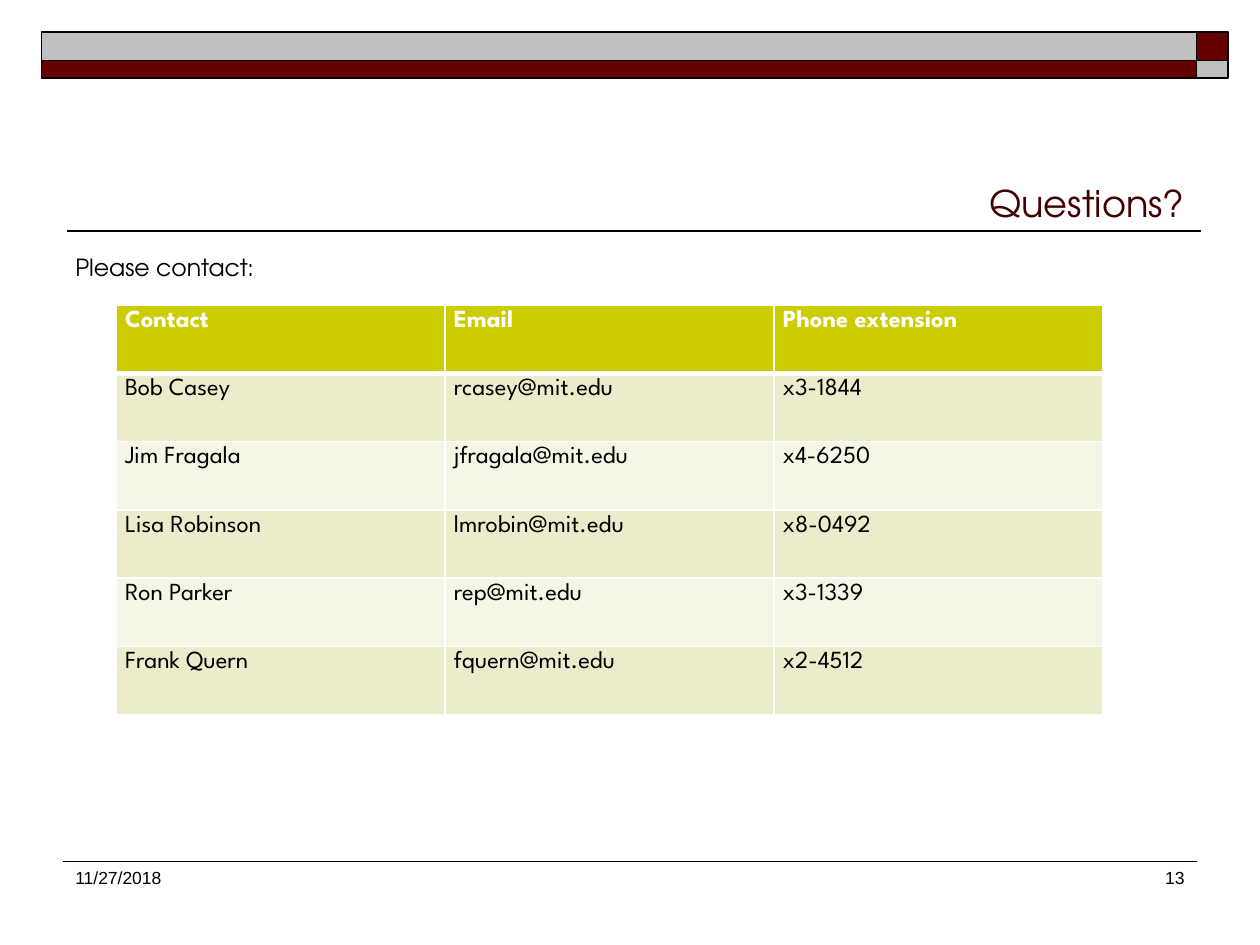
from lxml.etree import SubElement
from pptx import Presentation
from pptx.dml.color import RGBColor
from pptx.enum.shapes import MSO_CONNECTOR, MSO_SHAPE
from pptx.enum.text import MSO_ANCHOR as Anchor, PP_ALIGN as Align
from pptx.oxml import parse_xml
from pptx.oxml.ns import nsdecls, qn
from pptx.util import Cm, Pt

BLACK = RGBColor(0x00, 0x00, 0x00)
WHITE = RGBColor(0xFF, 0xFF, 0xFF)
MAROON = RGBColor(0x66, 0x00, 0x00)
TITLE_MAROON = RGBColor(0x42, 0x00, 0x00)
SILVER = RGBColor(0xC0, 0xC0, 0xC0)
OLIVE = RGBColor(0xCC, 0xCC, 0x00)
DARK_BAND = RGBColor(0xEC, 0xEC, 0xCC)
LIGHT_BAND = RGBColor(0xF6, 0xF6, 0xE7)

HEADING_FONT = "TeX Gyre Adventor"
TABLE_FONT = "League Spartan"
FOOTER_FONT = "Arial"

CONTACTS = [
    ("Contact", "Email", "Phone extension"),
    ("Bob Casey", "rcasey@mit.edu", "x3-1844"),
    ("Jim Fragala", "jfragala@mit.edu", "x4-6250"),
    ("Lisa Robinson", "lmrobin@mit.edu", "x8-0492"),
    ("Ron Parker", "rep@mit.edu", "x3-1339"),
    ("Frank Quern", "fquern@mit.edu", "x2-4512"),
]


def add_run(paragraph, wording, font_name, size, color, bold=False):
    run = paragraph.add_run()
    run.text = wording
    run.font.name = font_name
    run.font.size = Pt(size)
    run.font.color.rgb = color
    run.font.bold = bold


def add_label(slide, box, wording, font_name, size, color,
              align=Align.LEFT, anchor=Anchor.TOP):
    frame = slide.shapes.add_textbox(*box).text_frame
    frame.word_wrap = True
    frame.vertical_anchor = anchor
    paragraph = frame.paragraphs[0]
    paragraph.alignment = align
    add_run(paragraph, wording, font_name, size, color)
    return paragraph


def add_rule(slide, left, top, width, weight):
    rule = slide.shapes.add_connector(
        MSO_CONNECTOR.STRAIGHT, left, top, left + width, top)
    rule.line.color.rgb = BLACK
    rule.line.width = Pt(weight)
    SubElement(rule._element.spPr, qn("a:effectLst"))


def add_banner(slide, left, top, width, height):
    """Two stacked bars whose colours swap in the narrow end column."""
    end_width, upper_height = Cm(0.64), Cm(0.58)
    columns = [(left, width - end_width), (left + width - end_width, end_width)]
    rows = [(top, upper_height), (top + upper_height, height - upper_height)]
    for r, (y, bar_height) in enumerate(rows):
        for c, (x, bar_width) in enumerate(columns):
            bar = slide.shapes.add_shape(
                MSO_SHAPE.RECTANGLE, x, y, bar_width, bar_height)
            bar.shadow.inherit = False
            bar.fill.solid()
            bar.fill.fore_color.rgb = SILVER if r == c else MAROON
            bar.line.color.rgb = BLACK
            bar.line.width = Pt(1)


def add_title(slide, left, top, width, height):
    add_label(slide, (left, top, width, height), "Questions?", HEADING_FONT,
              21, TITLE_MAROON, Align.RIGHT, Anchor.BOTTOM)
    add_rule(slide, left + Cm(0.08), top + height, width, 1)


def add_intro(slide, left, top, width, height):
    intro = add_label(slide, (left, top, width, height), "Please contact:",
                      HEADING_FONT, 13.5, BLACK)
    intro.line_spacing = 0.8


def set_borders(cell, bottom_weight):
    weights = {"lnL": 1, "lnR": 1, "lnT": 1, "lnB": bottom_weight}
    properties = cell._tc.get_or_add_tcPr()
    for position, (side, weight) in enumerate(weights.items()):
        properties.insert(position, parse_xml(
            f'<a:{side} {nsdecls("a")} w="{Pt(weight)}"><a:solidFill>'
            f'<a:srgbClr val="{WHITE}"/></a:solidFill></a:{side}>'))


def add_contact_table(slide, left, top, width, height):
    table = slide.shapes.add_table(
        len(CONTACTS), len(CONTACTS[0]), left, top, width, height).table
    for r, contact in enumerate(CONTACTS):
        is_header = r == 0
        band = OLIVE if is_header else DARK_BAND if r % 2 else LIGHT_BAND
        for c, wording in enumerate(contact):
            cell = table.cell(r, c)
            cell.margin_left = cell.margin_right = Cm(0.18)
            cell.margin_top = cell.margin_bottom = Cm(0.1)
            cell.fill.solid()
            cell.fill.fore_color.rgb = band
            # The rule under the header is shared with the first contact row.
            set_borders(cell, 3 if is_header else 1)
            add_run(cell.text_frame.paragraphs[0], wording, TABLE_FONT, 14,
                    WHITE if is_header else BLACK, is_header)


def add_footer(slide, left, top, width, height):
    add_rule(slide, left, top, width, 0.75)
    date_width, number_width = Cm(4.65), Cm(5.28)
    add_label(slide, (left, top, date_width, height), "11/27/2018",
              FOOTER_FONT, 10, BLACK)
    add_label(slide, (left + width - number_width, top, number_width, height),
              "13", FOOTER_FONT, 10, BLACK, Align.RIGHT)


def main():
    deck = Presentation()
    deck.slide_width, deck.slide_height = Cm(25.4), Cm(19.05)
    slide = deck.slides.add_slide(deck.slide_layouts[6])
    margin, content_width = Cm(1.27), Cm(22.86)
    add_banner(slide, Cm(0.84), Cm(0.64), Cm(23.92), Cm(0.94))
    add_title(slide, margin, Cm(1.48), content_width, Cm(3.18))
    add_intro(slide, margin, Cm(5.08), content_width, Cm(1))
    add_contact_table(slide, Cm(2.34), Cm(6.15), Cm(19.89), Cm(8.26))
    add_footer(slide, margin, Cm(17.36), content_width, Cm(1.27))
    deck.save("out.pptx")


if __name__ == "__main__":
    main()
